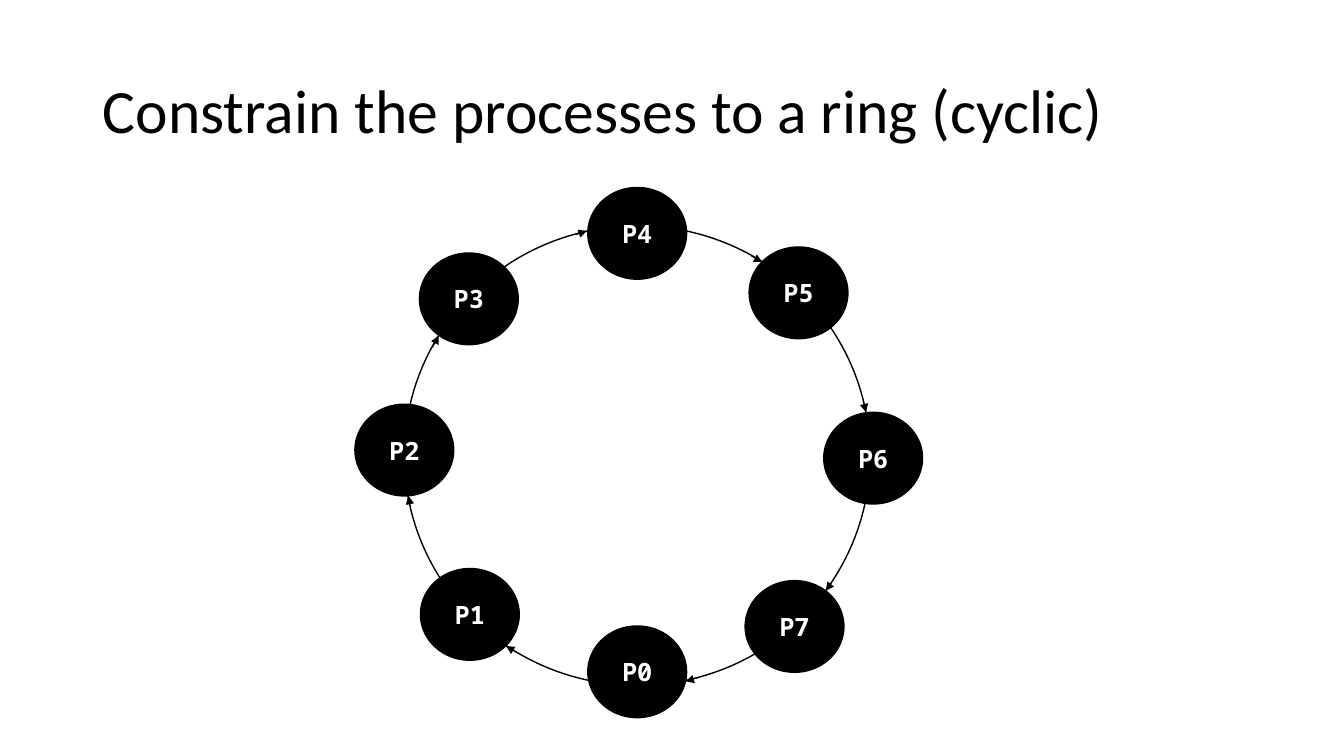
from lxml import etree
from pptx import Presentation
from pptx import util as u
from pptx.dml.color import RGBColor
from pptx.enum import shapes, text
from pptx.oxml.ns import qn

CELL = 0.1  # inches per grid column and row
INK, PAPER = "000000", "FFFFFF"


def tone(code):
    return RGBColor.from_string(code)


def grid(*cells):
    return [u.Inches(c * CELL) for c in cells]


class Board:
    """Holds the style, the current slide and the group for the ring."""
    font, mono = "Calibri", "Noto Sans Mono"

    def __init__(self, deck):
        self.slide = deck.slides.add_slide(deck.slide_layouts[5])
        fill = self.slide.background.fill
        fill.solid()
        fill.fore_color.rgb = tone(PAPER)
        self.ring = self.slide.shapes.add_group_shape().shapes

    def label(self, para, words, size, font, color, bold=False):
        run = para.add_run()
        run.text = words
        run.font.size = u.Pt(size)
        run.font.name = font
        run.font.bold = bold
        run.font.color.rgb = tone(color)

    def title(self, words, *box):
        head = self.slide.shapes.title
        head.left, head.top, head.width, head.height = grid(*box)
        frame = head.text_frame
        frame.auto_size = text.MSO_AUTO_SIZE.NONE
        frame.vertical_anchor = text.MSO_ANCHOR.MIDDLE
        para = frame.paragraphs[0]
        para.alignment = text.PP_ALIGN.LEFT
        para.line_spacing = 0.9
        self.label(para, words, 44, self.font, INK)

    def stroke(self, line, width):
        line.color.rgb = tone(INK)
        line.width = u.Pt(width)

    def oval(self, *box, fill=None):
        oval = self.ring.add_shape(shapes.MSO_SHAPE.OVAL, *grid(*box))
        oval.shadow.inherit = False
        if fill:
            oval.fill.solid()
            oval.fill.fore_color.rgb = tone(fill)
        else:
            oval.fill.background()
        self.stroke(oval.line, 1)
        return oval

    def node(self, name, col, row):
        frame = self.oval(col, row, 9.8, 9.1, fill=INK).text_frame
        frame.word_wrap = False
        frame.vertical_anchor = text.MSO_ANCHOR.MIDDLE
        para = frame.paragraphs[0]
        para.alignment = text.PP_ALIGN.CENTER
        self.label(para, name, 18, self.mono, PAPER, bold=True)

    def arrow(self, *ends):
        kind = shapes.MSO_CONNECTOR.STRAIGHT
        link = self.ring.add_connector(kind, *grid(*ends))
        self.stroke(link.line, 0.5)
        props = link._element.spPr
        tip = etree.SubElement(props.find(qn("a:ln")), qn("a:tailEnd"))
        tip.set("type", "triangle")
        etree.SubElement(props, qn("a:effectLst"))


# Left and top of each process, P0 to P7, clockwise from the bottom
NODES = [(58.3, 62.1), (41.7, 56.4), (35.2, 40.1), (41.6, 25.1),
         (58.3, 18.6), (74.3, 24.5), (81.7, 40.9), (73.9, 57.6)]

# Start and end of each arrow tip, lying along the ring
TIPS = [(42.9, 34.5, 43.5, 33.3), (57.1, 23.3, 58.2, 22.9),
        (74.5, 25.4, 75.6, 26), (85.6, 39.7, 85.9, 40.9),
        (82.5, 57.8, 81.9, 58.6), (69.4, 67.2, 68, 67.6),
        (51.2, 64.7, 50.2, 64.1), (40.7, 50.2, 40.5, 49.2)]


def main():
    deck = Presentation()
    deck.slide_width, deck.slide_height = u.Inches(13.33), u.Inches(7.5)
    board = Board(deck)

    # Heading
    board.title("Constrain the processes to a ring (cyclic)", 9.2, 4, 115, 14.5)

    # Ring with its processes
    board.oval(40.1, 22.4, 46.2, 45.6)
    for rank, spot in enumerate(NODES):
        board.node(f"P{rank}", *spot)

    # Direction of travel
    for tip in TIPS:
        board.arrow(*tip)

    deck.save("out.pptx")


if __name__ == "__main__":
    main()
